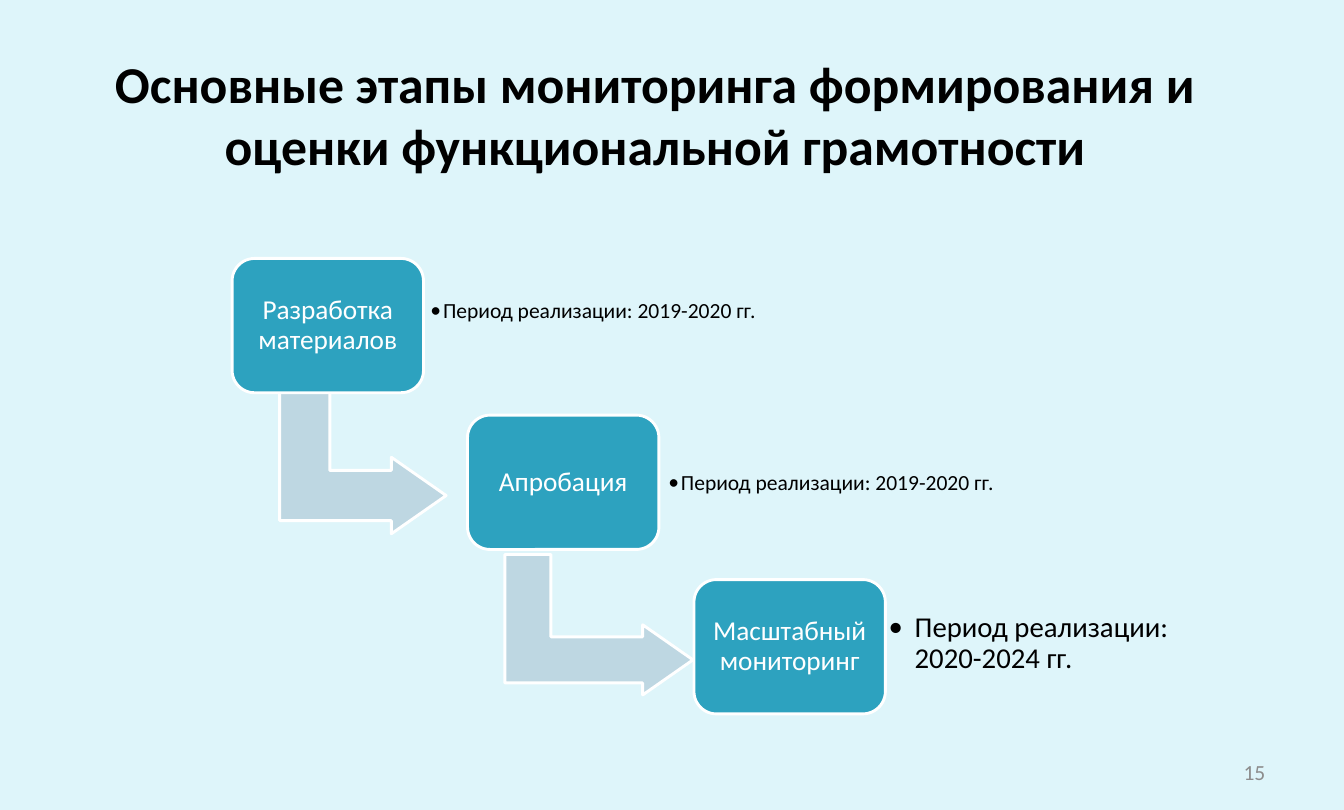
from dataclasses import dataclass

import pptx
import pptx.dml.color
import pptx.enum.shapes
import pptx.enum.text
import pptx.oxml
import pptx.oxml.ns
import pptx.util
from pptx.util import Cm

ALIGN = pptx.enum.text.PP_ALIGN
SHAPE = pptx.enum.shapes.MSO_SHAPE
Box = tuple[float, float, float, float]

FONT = "Calibri"
BLACK, WHITE, GREY = "000000", "FFFFFF", "8C8C8C"
BACKGROUND, TEAL, PALE_BLUE = "DEF5FA", "2DA2BF", "BED7E2"
STAGE_W, STAGE_H = 4.7, 3.3


@dataclass
class Stage:
    name: str
    left: float
    top: float
    period: str
    period_box: Box
    period_size: int = 15
    indent: float = 0.31


STAGES = [
    Stage("Разработка материалов", 5.7, 6.35,
          "Период реализации: 2019-2020 гг.", (10.37, 6.32, 11.1, 2.67)),
    Stage("Апробация", 11.48, 10.2,
          "Период реализации: 2019-2020 гг.", (16.21, 10.54, 10.13, 2.67)),
    Stage("Масштабный мониторинг", 17.04, 14.24,
          "Период реализации: 2020-2024 гг.", (21.62, 14.48, 7.37, 2.67), 20, 0.64),
]
ARROWS: list[Box] = [(7.03, 9.19, 3.76, 4.09), (12.98, 13.04, 3.45, 4.62)]


def rgb(value: str):
    return pptx.dml.color.RGBColor.from_string(value)


def write(sp, text: str, *, size: int, color: str = BLACK, bold: bool = False,
          align=ALIGN.LEFT, spacing: float = 1.0, inset: tuple = (0.2, 0.2),
          anchor=pptx.enum.text.MSO_ANCHOR.MIDDLE):
    tf = sp.text_frame
    tf.word_wrap = True
    tf.auto_size = pptx.enum.text.MSO_AUTO_SIZE.NONE
    tf.vertical_anchor = anchor
    tf.margin_left = tf.margin_right = Cm(inset[0])
    tf.margin_top = tf.margin_bottom = Cm(inset[1])
    p = tf.paragraphs[0]
    p.alignment = align
    p.line_spacing = spacing
    r = p.add_run()
    r.text = text
    r.font.name, r.font.size, r.font.bold = FONT, pptx.util.Pt(size), bold
    r.font.color.rgb = rgb(color)
    return p


def add_block(s, kind, box: Box, fill: str, adjustments: list[float]):
    sp = s.shapes.add_shape(kind, *map(Cm, box))
    sp.shadow.inherit = False
    sp.fill.solid()
    sp.fill.fore_color.rgb = rgb(fill)
    sp.line.color.rgb = rgb(WHITE)
    sp.line.width = pptx.util.Pt(2)
    for i, value in enumerate(adjustments):
        sp.adjustments[i] = value
    return sp


def add_bullet(p, indent: float) -> None:
    pPr = p._p.get_or_add_pPr()
    pPr.set("marL", str(Cm(indent)))
    pPr.set("indent", str(-Cm(indent)))
    for tag in (f'buFont typeface="{FONT}"', 'buChar char="•"'):
        name, attribute = tag.split(" ", 1)
        pPr.append(pptx.oxml.parse_xml(
            f'<a:{name} {pptx.oxml.ns.nsdecls("a")} {attribute}/>'))


def add_stage(s, stage: Stage) -> None:
    sp = add_block(s, SHAPE.ROUNDED_RECTANGLE,
                   (stage.left, stage.top, STAGE_W, STAGE_H), TEAL, [0.167])
    write(sp, stage.name, size=19, color=WHITE, align=ALIGN.CENTER,
          spacing=0.9, inset=(0.15, 0.2))
    period = s.shapes.add_textbox(*map(Cm, stage.period_box))
    p = write(period, stage.period, size=stage.period_size, spacing=0.9)
    add_bullet(p, stage.indent)


def main() -> None:
    prs = pptx.Presentation()
    prs.slide_width, prs.slide_height = Cm(33), Cm(19.9)
    s = prs.slides.add_slide(prs.slide_layouts.get_by_name("Title Only"))
    s.background.fill.solid()
    s.background.fill.fore_color.rgb = rgb(BACKGROUND)

    title = s.shapes.title
    title.left, title.top, title.width, title.height = map(Cm, (2.49, 1.55, 27.2, 2.49))
    write(title, "Основные этапы мониторинга формирования и оценки функциональной грамотности",
          size=36, bold=True, align=ALIGN.CENTER, inset=(0.28, 0.15))

    for box in ARROWS:
        arrow = add_block(s, SHAPE.BENT_UP_ARROW, box, PALE_BLUE, [0.328, 0.25, 0.358])
        arrow.rotation = 90
    for stage in STAGES:
        add_stage(s, stage)

    number = s.shapes.add_textbox(*map(Cm, (23.65, 18.43, 7.7, 1.07)))
    write(number, "15", size=15, color=GREY, align=ALIGN.RIGHT, inset=(0.28, 0.15))
    prs.save("out.pptx")


if __name__ == "__main__":
    main()
